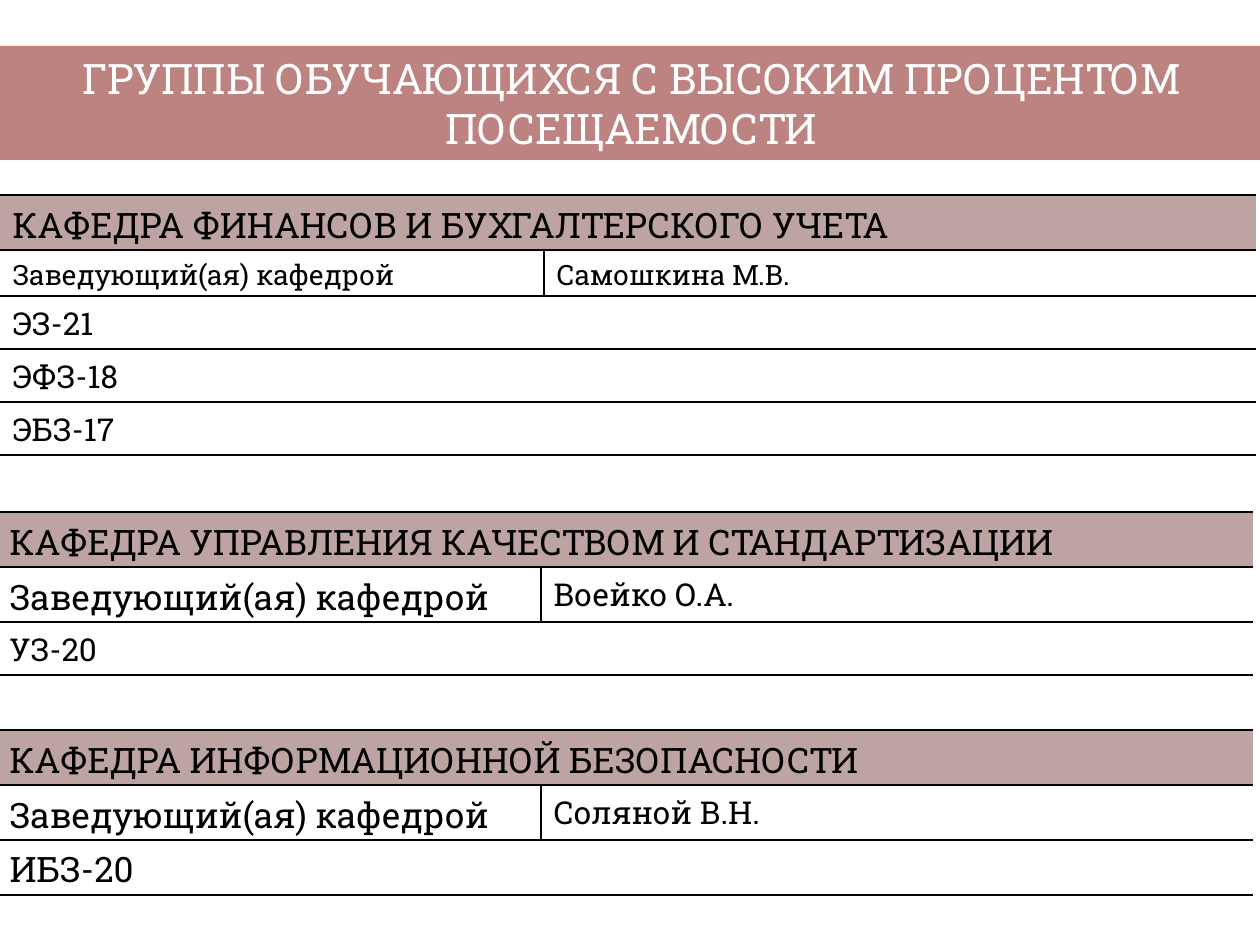
import pptx
import pptx.util
import pptx.dml.color
import pptx.enum.text
import pptx.oxml.ns
from lxml import etree

PX = 914400 // 126  # EMU in one px
FONT = "Roboto Slab"
COLORS = {"banner": "953735", "heading": "BEA3A3", "ink": "000000", "white": "FFFFFF"}
BANNER_OPACITY = 62
PLAIN_STYLE = "{2D5ABB26-0587-4C30-8999-92F81FD0307C}"

TITLE = "ГРУППЫ ОБУЧАЮЩИХСЯ С ВЫСОКИМ ПРОЦЕНТОМ ПОСЕЩАЕМОСТИ"
HEAD_LABEL = "Заведующий(ая) кафедрой"
HEADING_SIZE = 20
DEPARTMENTS = [
    {"name": "КАФЕДРА ФИНАНСОВ И БУХГАЛТЕРСКОГО УЧЕТА", "left": 0, "top": 195,
     "head": "Самошкина М.В.", "label_size": 16, "head_size": 16,
     "groups": ["ЭЗ-21", "ЭФЗ-18", "ЭБЗ-17"], "group_size": 18},
    {"name": "КАФЕДРА УПРАВЛЕНИЯ КАЧЕСТВОМ И СТАНДАРТИЗАЦИИ", "left": -3, "top": 512,
     "head": "Воейко О.А.", "label_size": 20, "head_size": 18,
     "groups": ["УЗ-20"], "group_size": 18},
    {"name": "КАФЕДРА ИНФОРМАЦИОННОЙ БЕЗОПАСНОСТИ", "left": -3, "top": 730,
     "head": "Соляной В.Н.", "label_size": 20, "head_size": 18,
     "groups": ["ИБЗ-20"], "group_size": 20},
]
COLUMNS = (544, 712)
ROW_HEIGHTS = {16: 46, 18: 53, 20: 55}  # font size in pt: height in px


def px(length):
    return pptx.util.Emu(length * PX)


def rgb(name):
    return pptx.dml.color.RGBColor.from_string(COLORS[name])


def write(frame, text, size, color="ink"):
    frame.text = text
    font = frame.paragraphs[0].runs[0].font
    font.name = FONT
    font.size = pptx.util.Pt(size)
    font.color.rgb = rgb(color)


def add_borders(cell, sides):
    """Draw 1 pt lines on the given sides; the others stay empty."""
    properties = cell._tc.get_or_add_tcPr()
    for side in "LRTB":
        drawn = side in sides
        line = etree.SubElement(properties, pptx.oxml.ns.qn("a:ln" + side),
                                w="12700" if drawn else "0")
        if drawn:
            solid = etree.SubElement(line, pptx.oxml.ns.qn("a:solidFill"))
            etree.SubElement(solid, pptx.oxml.ns.qn("a:srgbClr"), val=COLORS["ink"])
        else:
            etree.SubElement(line, pptx.oxml.ns.qn("a:noFill"))


def add_title(slide):
    title = slide.shapes.title
    title.left, title.top, title.width, title.height = map(px, (0, 46, 1262, 114))
    title.fill.solid()
    title.fill.fore_color.rgb = rgb("banner")
    color = title._element.spPr.find(".//" + pptx.oxml.ns.qn("a:srgbClr"))
    etree.SubElement(color, pptx.oxml.ns.qn("a:alpha"), val=str(BANNER_OPACITY * 1000))
    frame = title.text_frame
    frame.word_wrap = True
    frame.auto_size = pptx.enum.text.MSO_AUTO_SIZE.NONE
    frame.vertical_anchor = pptx.enum.text.MSO_ANCHOR.MIDDLE
    write(frame, TITLE, 24, "white")
    frame.paragraphs[0].alignment = pptx.enum.text.PP_ALIGN.CENTER


def add_department(slide, department):
    rows = [[(department["name"], HEADING_SIZE)],
            [(HEAD_LABEL, department["label_size"]),
             (department["head"], department["head_size"])]]
    rows += [[(group, department["group_size"])] for group in department["groups"]]
    heights = [ROW_HEIGHTS[max(size for _, size in row)] for row in rows]

    frame = slide.shapes.add_table(
        len(rows), len(COLUMNS), px(department["left"]), px(department["top"]),
        px(sum(COLUMNS)), px(sum(heights)))
    table = frame.table
    table.first_row = table.horz_banding = False
    table._tbl.tblPr.find(pptx.oxml.ns.qn("a:tableStyleId")).text = PLAIN_STYLE
    for column, width in zip(table.columns, COLUMNS):
        column.width = px(width)

    for index, (row, height) in enumerate(zip(rows, heights)):
        table.rows[index].height = px(height)
        split = len(row) > 1
        for column in range(len(COLUMNS)):
            cell = table.cell(index, column)
            cell.margin_bottom = 0
            add_borders(cell, "TB" + ("RL"[column] if split else ""))
            if index == 0:
                cell.fill.solid()
                cell.fill.fore_color.rgb = rgb("heading")
            else:
                cell.fill.background()
        if not split:
            table.cell(index, 0).merge(table.cell(index, len(COLUMNS) - 1))
        for column, (text, size) in enumerate(row):
            write(table.cell(index, column).text_frame, text, size)


def main():
    deck = pptx.Presentation()
    deck.slide_width, deck.slide_height = px(1260), px(945)
    page = deck.slides.add_slide(deck.slide_layouts.get_by_name("Title Only"))
    add_title(page)
    for department in DEPARTMENTS:
        add_department(page, department)
    deck.save("out.pptx")


if __name__ == "__main__":
    main()
